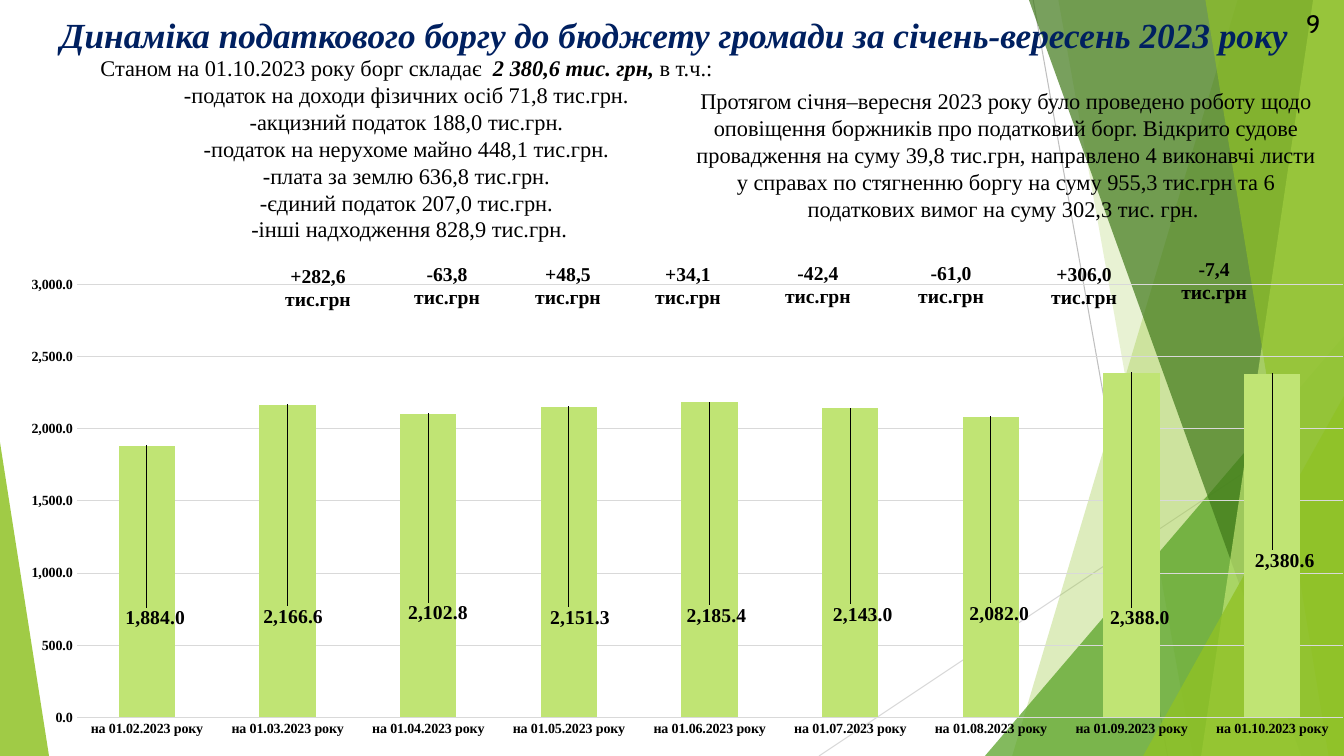
import pptx
import pptx.chart.data
import pptx.dml.color
import pptx.enum.chart
import pptx.enum.shapes
import pptx.enum.text
import pptx.oxml
import pptx.oxml.ns
import pptx.util

Pt = pptx.util.Pt
RGB = pptx.dml.color.RGBColor
BLACK = RGB(0x00, 0x00, 0x00)
NAVY = RGB(0x00, 0x20, 0x60)
LEAF = RGB(0x90, 0xC2, 0x26)
GRASS = RGB(0x54, 0xA0, 0x21)
FOREST = RGB(0x3F, 0x78, 0x19)
LIME = RGB(0xC0, 0xE4, 0x74)
SILVER = RGB(0xBF, 0xBF, 0xBF)
PALE = RGB(0xD9, 0xD9, 0xD9)

WIDTH, HEIGHT = 960, 540
CHART_WIDTH, CHART_HEIGHT = 960, 350.6
SERIF = "Times New Roman"
NUMBER = "#,##0.0"

DEBT = [1884, 2166.6, 2102.8, 2151.3, 2185.4, 2143, 2082, 2388, 2380.6]
LABEL_SHIFTS = [(6, 134), (4, 162), (7, 153), (8, 161), (5, 163),
                (9, 158), (6, 151), (6, 186), (9, 144)]
CHANGES = [("+282,6 тис.грн", 184.3, 190), ("-63,8\nтис.грн", 276.5, 188.6),
           ("+48,5 тис.грн", 362.9, 188.6), ("+34,1 тис.грн", 448.6, 188.6),
           ("-42,4 тис.грн", 541.4, 187.9), ("-61,0 тис.грн", 636.5, 187.9),
           ("+306,0 тис.грн", 731.5, 188.6), ("-7,4 тис.грн", 824.4, 185)]
BALANCE = ["-податок на доходи фізичних осіб 71,8 тис.грн. ",
           "-акцизний податок 188,0 тис.грн. ",
           "-податок на нерухоме майно 448,1 тис.грн. ",
           "-плата за землю 636,8 тис.грн. ",
           "-єдиний податок 207,0 тис.грн. ",
           "-інші надходження 828,9 тис.грн."]
ENFORCEMENT = (
    "Протягом січня–вересня 2023 року було проведено роботу щодо оповіщення "
    "боржників про податковий борг. Відкрито судове провадження на суму 39,8 "
    "тис.грн, направлено 4 виконавчі листи у справах по стягненню боргу на суму "
    "955,3 тис.грн та 6 податкових вимог на суму 302,3 тис. грн. ")


def style(font, size, color=BLACK, bold=False, italic=False, name=SERIF):
    """Format a font."""
    font.name, font.size, font.bold, font.italic = name, Pt(size), bold, italic
    font.color.rgb = color


def paint(shape, color, opacity):
    """Fill a shape with a translucent colour and drop its outline."""
    shape.shadow.inherit = False
    shape.line.fill.background()
    shape.fill.solid()
    shape.fill.fore_color.rgb = color
    tint = shape.fill._xPr.find(".//" + pptx.oxml.ns.qn("a:srgbClr"))
    tint.append(pptx.oxml.parse_xml(
        f'<a:alpha {pptx.oxml.ns.nsdecls("a")} val="{opacity * 1000}"/>'))


def add_ray(slide, start, end, color):
    """Draw a thin straight line."""
    ray = slide.shapes.add_connector(
        pptx.enum.shapes.MSO_CONNECTOR.STRAIGHT, *map(Pt, start + end))
    ray.line.color.rgb = color
    ray.line.width = Pt(0.75)
    ray._element.spPr.append(pptx.oxml.parse_xml(
        f'<a:effectLst {pptx.oxml.ns.nsdecls("a")}/>'))


def add_band(slide, top_x, bottom_x, color, opacity):
    """Fill the area between a slanted edge and the slide's right side."""
    outline = slide.shapes.build_freeform(Pt(top_x), 0)
    corners = [(WIDTH, 0), (WIDTH, HEIGHT), (bottom_x, HEIGHT)]
    outline.add_line_segments([(Pt(x), Pt(y)) for x, y in corners])
    paint(outline.convert_to_shape(), color, opacity)


def add_wedge(slide, left, top, width, apex, color, opacity):
    """Draw a right triangle standing on the slide's bottom edge."""
    wedge = slide.shapes.add_shape(
        pptx.enum.shapes.MSO_SHAPE.ISOSCELES_TRIANGLE,
        Pt(left), Pt(top), Pt(width), Pt(HEIGHT - top))
    wedge.adjustments[0] = apex
    paint(wedge, color, opacity)


def add_backdrop(slide):
    """Draw the green facets on both sides of the slide."""
    add_ray(slide, (738, 0), (834, HEIGHT), SILVER)
    add_ray(slide, (WIDTH, 290), (585, HEIGHT), PALE)
    add_band(slide, 884, 723, LEAF, 30)
    add_band(slide, 756, 852, LEAF, 20)
    add_wedge(slide, 703.5, 240, 256.5, 1, GRASS, 72)
    add_band(slide, 735, 929.5, FOREST, 70)
    add_band(slide, 938, 858, LIME, 70)
    add_band(slide, 861, 949, LEAF, 65)
    add_wedge(slide, 816.5, 283, 143.5, 1, LEAF, 80)
    add_wedge(slide, 0, 316, 35, 0, LEAF, 85)


def add_text(slide, box, text, size, bold=False, name=SERIF,
             align=pptx.enum.text.PP_ALIGN.CENTER,
             anchor=pptx.enum.text.MSO_ANCHOR.TOP):
    """Add a wrapped text box and return its frame."""
    frame = slide.shapes.add_textbox(*map(Pt, box)).text_frame
    frame.word_wrap = True
    frame.vertical_anchor = anchor
    frame.text = text
    for paragraph in frame.paragraphs:
        paragraph.alignment = align
        for run in paragraph.runs:
            style(run.font, size, bold=bold, name=name)
    return frame


def add_balance(slide):
    """List the debt by kind of tax, with the total emphasised."""
    opening = "Станом на 01.10.2023 року борг складає "
    frame = add_text(slide, (62.6, 35.3, 459.4, 143.3),
                     "\n".join([opening] + BALANCE), 16)
    for text, strong in [(" 2 380,6 тис. грн, ", True), ("в т.ч.: ", False)]:
        run = frame.paragraphs[0].add_run()
        run.text = text
        style(run.font, 16, bold=strong, italic=strong)


def shift_label(point, across, down):
    """Move a point's value label from its default place."""
    label = point.data_label
    style(label.font, 14, bold=True)
    label.position = pptx.enum.chart.XL_LABEL_POSITION.OUTSIDE_END
    index = label._dLbl.find(pptx.oxml.ns.qn("c:idx"))
    ns = pptx.oxml.ns.nsdecls("c")
    index.addnext(pptx.oxml.parse_xml(
        f'<c:numFmt {ns} formatCode="{NUMBER}" sourceLinked="0"/>'))
    index.addnext(pptx.oxml.parse_xml(
        f'<c:layout {ns}><c:manualLayout><c:x val="{across / CHART_WIDTH}"/>'
        f'<c:y val="{down / CHART_HEIGHT}"/></c:manualLayout></c:layout>'))


def add_debt_chart(slide):
    """Chart the debt at the start of each month."""
    data = pptx.chart.data.CategoryChartData(number_format=NUMBER)
    data.categories = [f"на 01.{month:02}.2023 року" for month in range(2, 11)]
    data.add_series("Series 1", DEBT)
    chart = slide.shapes.add_chart(
        pptx.enum.chart.XL_CHART_TYPE.COLUMN_CLUSTERED,
        0, Pt(197.3), Pt(CHART_WIDTH), Pt(CHART_HEIGHT), data).chart
    chart.has_legend = chart.has_title = False
    style(chart.font, 10, name="Cabin")
    for axis in (chart.category_axis, chart.value_axis):
        axis.major_tick_mark = pptx.enum.chart.XL_TICK_MARK.NONE
        axis.format.line.fill.background()
        style(axis.tick_labels.font, 10, bold=True)
    values = chart.value_axis
    values.minimum_scale, values.maximum_scale, values.major_unit = 0, 3000, 500
    values.tick_labels.number_format = NUMBER
    values.tick_labels.number_format_is_linked = False
    values.major_gridlines.format.line.color.rgb = PALE
    values.major_gridlines.format.line.width = Pt(0.75)

    plot = chart.plots[0]
    plot.gap_width = 150
    plot.vary_by_categories = False
    months = plot.series[0]
    months.format.fill.solid()
    months.format.fill.fore_color.rgb = LIME
    for index, shift in enumerate(LABEL_SHIFTS):
        shift_label(months.points[index], *shift)

    area = chart._chartSpace.chart.plotArea
    for layout in area.findall(pptx.oxml.ns.qn("c:layout")):
        area.remove(layout)
    area.insert(0, pptx.oxml.parse_xml(
        f'<c:layout {pptx.oxml.ns.nsdecls("c")}><c:manualLayout>'
        '<c:layoutTarget val="inner"/><c:xMode val="edge"/><c:yMode val="edge"/>'
        '<c:x val="0.057"/><c:y val="0.017"/><c:w val="0.942"/><c:h val="0.882"/>'
        '</c:manualLayout></c:layout>'))


def place_title(slide):
    """Write the title in front of the backdrop."""
    title = slide.shapes.title
    title._element.getparent().append(title._element)
    title.left, title.top, title.width, title.height = map(
        Pt, (20.9, 3.6, 928, 41.8))
    frame = title.text_frame
    frame.text = ("Динаміка податкового боргу до бюджету громади "
                  "за січень-вересень 2023 року ")
    frame.vertical_anchor = pptx.enum.text.MSO_ANCHOR.MIDDLE
    frame.paragraphs[0].alignment = pptx.enum.text.PP_ALIGN.CENTER
    style(frame.paragraphs[0].runs[0].font, 25.2, NAVY, bold=True, italic=True)


def main():
    """Build the slide on tax debt and save it."""
    deck = pptx.Presentation()
    deck.slide_width, deck.slide_height = Pt(WIDTH), Pt(HEIGHT)
    slide = deck.slides.add_slide(deck.slide_layouts[5])
    add_backdrop(slide)
    place_title(slide)
    add_balance(slide)
    add_text(slide, (925.9, 2.2, 32.4, 28.8), "9", 18, name="Cabin",
             align=pptx.enum.text.PP_ALIGN.LEFT)
    add_text(slide, (488.2, 59, 460.8, 104.4), ENFORCEMENT, 16)
    add_debt_chart(slide)
    for change, left, top in CHANGES:
        add_text(slide, (left, top, 85.7, 30.2), change, 14, bold=True,
                 anchor=pptx.enum.text.MSO_ANCHOR.MIDDLE)
    deck.save("out.pptx")


if __name__ == "__main__":
    main()
